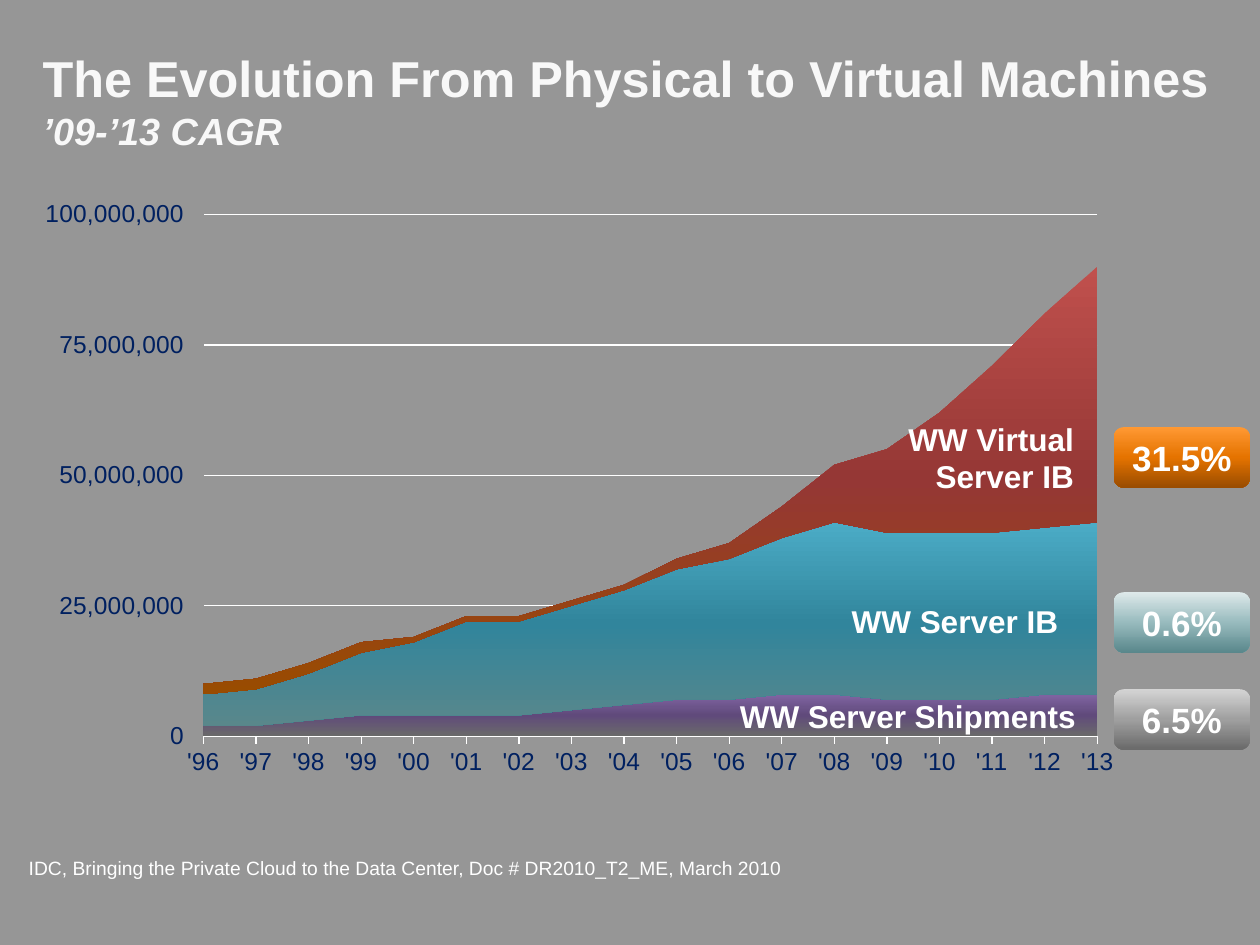
"""Builds the slide on the growth of physical and virtual servers."""
from copy import deepcopy

from lxml.etree import SubElement
from pptx import Presentation
from pptx.chart.data import CategoryChartData
from pptx.dml.color import RGBColor
from pptx.enum.chart import XL_CHART_TYPE, XL_TICK_MARK
from pptx.enum.shapes import MSO_SHAPE
from pptx.enum.text import MSO_ANCHOR, PP_ALIGN
from pptx.oxml.ns import qn
from pptx.util import Inches, Pt

FONT, WHITE, GREY, NAVY, TITLE_COLOUR = "Arial", "FFFFFF", "969696", "002060", "F8F8F8"
MILLION = 1_000_000
TITLE = [("The Evolution From Physical to Virtual Machines", 28.8, False),
         ("’09-’13 CAGR", 21.6, True)]
SOURCE = "IDC, Bringing the Private Cloud to the Data Center, Doc # DR2010_T2_ME, March 2010"
YEARS = [f"'{year % 100:02}" for year in range(1996, 2014)]
SERIES = [
    ("Series 1", [2, 2, 3, 4, 4, 4, 4, 5, 6, 7, 7, 8, 8, 7, 7, 7, 8, 8],
     ("8064A2", "604A7B", "6A6A6A")),
    ("Series 2", [6, 7, 9, 12, 14, 18, 18, 20, 22, 25, 27, 30, 33, 32, 32, 32, 32, 33],
     ("4BACC6", "31859C", "59878B")),
    ("Series 3", [2, 2, 2, 2, 1, 1, 1, 1, 1, 2, 3, 6, 11, 16, 23, 32, 41, 49],
     ("C0504D", "953735", "994C00")),
]
PLOT_SHARES = {"x": 0.175, "y": 0.068, "w": 0.809, "h": 0.82}
LABEL_RIGHT = 8.66
LABELS = [
    ("WW Server IB", 4.7, 2.09, 0.45, 0.24),
    ("WW Server Shipments", 5.46, 3.23, 0.45, 0.1),
    ("WW Virtual\nServer IB", 3.24, 1.82, 0.78, 0.1),
]
RATE_LEFT, RATE_WIDTH, RATE_HEIGHT = 8.84, 1.08, 0.48
RATES = [
    ("31.5%", 3.39, ("FF9933", "E57300", "994C00")),
    ("0.6%", 4.7, ("DEE9EA", "98BBBE", "59878B")),
    ("6.5%", 5.47, ("D4D4D4", "9F9F9F", "6A6A6A")),
]


def colour(value):
    return RGBColor.from_string(value)


def style(font, size, value=WHITE, bold=False, italic=False):
    font.name, font.size, font.bold, font.italic = FONT, Pt(size), bold, italic
    font.color.rgb = colour(value)


def fill_gradient(fill, properties, colours):
    fill.gradient()
    fill.gradient_angle = 270
    stops = properties.find(".//" + qn("a:gsLst"))
    stops.append(deepcopy(stops[-1]))
    for stop, value, position in zip(fill.gradient_stops, colours, (0, 0.5, 1)):
        stop.color.rgb = colour(value)
        stop.position = position


def write(box, text, size, align=PP_ALIGN.LEFT, bold=False, right=0.1):
    frame = box.text_frame
    frame.word_wrap = True
    frame.margin_right = Inches(right)
    frame.text = text
    for para in frame.paragraphs:
        para.alignment = align
        style(para.runs[0].font, size, bold=bold)


def add_panel(page, left, top, width, height):
    box = page.shapes.add_shape(MSO_SHAPE.FLOWCHART_ALTERNATE_PROCESS,
                                *map(Inches, (left, top, width, height)))
    box.shadow.inherit = False
    box.fill.background()
    box.line.fill.background()
    return box


def add_title(page):
    box = page.shapes.add_textbox(*map(Inches, (0.24, 0.17, 9.58, 1.25)))
    frame = box.text_frame
    frame.word_wrap = True
    frame.vertical_anchor = MSO_ANCHOR.MIDDLE
    para = frame.paragraphs[0]
    for index, (text, size, italic) in enumerate(TITLE):
        if index:
            para.add_line_break()
        span = para.add_run()
        span.text = text
        style(span.font, size, TITLE_COLOUR, bold=True, italic=italic)


def place_plot(chart):
    plot_area = chart._chartSpace.chart.plotArea
    for layout in plot_area.findall(qn("c:layout")):
        plot_area.remove(layout)
    layout = SubElement(plot_area, qn("c:layout"))
    plot_area.insert(0, layout)
    manual = SubElement(layout, qn("c:manualLayout"))
    settings = {"layoutTarget": "inner", "xMode": "edge", "yMode": "edge", **PLOT_SHARES}
    for name, value in settings.items():
        SubElement(manual, qn(f"c:{name}")).set("val", str(value))
    plot_area.find(".//" + qn("c:crossBetween")).set("val", "midCat")


def add_server_chart(page):
    data = CategoryChartData()
    data.categories = YEARS
    for name, millions, _ in SERIES:
        data.add_series(name, [value * MILLION for value in millions])
    chart = page.shapes.add_chart(XL_CHART_TYPE.AREA_STACKED,
                                  *map(Inches, (0.08, 1.36, 8.77, 5.05)), data).chart
    chart.has_title = chart.has_legend = False
    style(chart.font, 14, NAVY)
    place_plot(chart)
    for series, (_, _, colours) in zip(chart.plots[0].series, SERIES):
        properties = series._element.get_or_add_spPr()
        fill_gradient(series.format.fill, properties, colours)
        series.format.line.fill.background()
    values, years = chart.value_axis, chart.category_axis
    values.minimum_scale, values.maximum_scale = 0, 100 * MILLION
    values.major_unit = 25 * MILLION
    values.has_major_gridlines = True
    values.tick_labels.number_format = r"#,##0_);[Red]\(#,##0\)"
    values.tick_labels.number_format_is_linked = False
    years.has_major_gridlines = False
    lines = [(values.format.line, GREY), (years.format.line, WHITE),
             (values.major_gridlines.format.line, WHITE)]
    for line, value in lines:
        line.color.rgb = colour(value)
        line.width = Pt(0.75)
    for axis in (values, years):
        axis.major_tick_mark = XL_TICK_MARK.OUTSIDE
        axis.minor_tick_mark = XL_TICK_MARK.NONE


def main():
    deck = Presentation()
    deck.slide_width, deck.slide_height = Inches(10), Inches(7.5)
    page = deck.slides.add_slide(deck.slide_layouts[6])
    page.background.fill.solid()
    page.background.fill.fore_color.rgb = colour(GREY)
    add_title(page)
    add_server_chart(page)
    for text, top, width, height, right in LABELS:
        box = add_panel(page, LABEL_RIGHT - width, top, width, height)
        write(box, text, 18, PP_ALIGN.RIGHT, bold=True, right=right)
    for text, top, colours in RATES:
        box = add_panel(page, RATE_LEFT, top, RATE_WIDTH, RATE_HEIGHT)
        fill_gradient(box.fill, box._element.spPr, colours)
        write(box, text, 20, PP_ALIGN.CENTER, bold=True)
    box = page.shapes.add_textbox(*map(Inches, (0.13, 6.75, 6.2, 0.29)))
    write(box, SOURCE, 11)
    deck.save("out.pptx")


if __name__ == "__main__":
    main()
